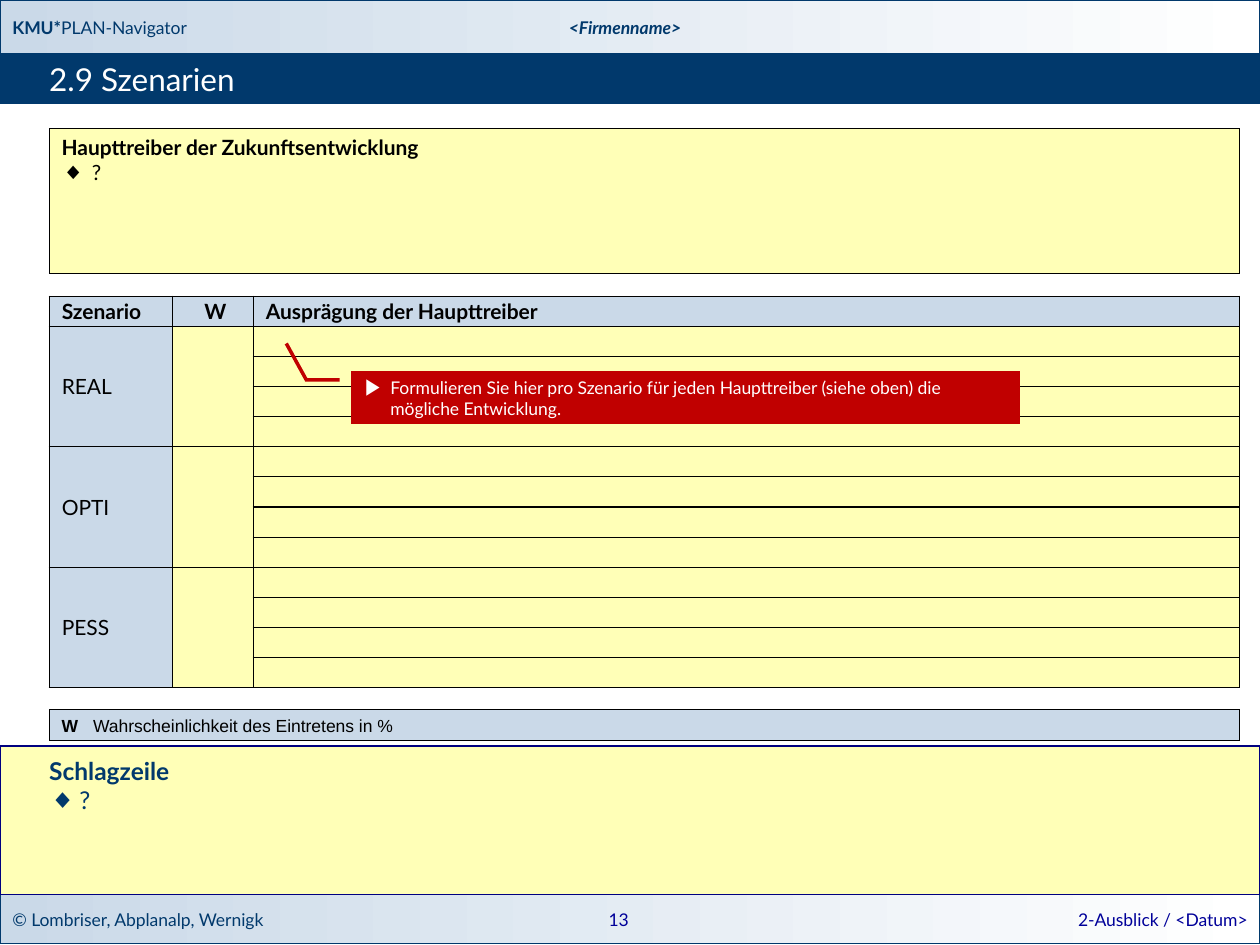
from lxml.etree import SubElement
from pptx import Presentation
from pptx.dml.color import RGBColor
from pptx.enum.shapes import MSO_SHAPE
from pptx.enum.text import MSO_ANCHOR, PP_ALIGN
from pptx.oxml.ns import qn
from pptx.util import Emu, Inches, Pt

NAVY = RGBColor(0x01, 0x39, 0x6C)
BLUE = RGBColor(0x00, 0x00, 0x99)
EDGE = RGBColor(0x00, 0x00, 0x80)
PALE = RGBColor(0xCA, 0xD9, 0xE8)
YELLOW = RGBColor(0xFF, 0xFF, 0xB7)
RED = RGBColor(0xC0, 0x00, 0x00)
BLACK = RGBColor(0, 0, 0)
WHITE = RGBColor(0xFF, 0xFF, 0xFF)

W, H = 10, 7.5
LEFT, BODY_W = 0.39, 9.45
BAR_H = 0.39
FOOT_Y = 7.1
INSETS = (0.1, 0.05, 0.1, 0.05)
TIGHT = (0.1, 0.04, 0.1, 0.04)

HEADERS = ["Szenario", "W", "Ausprägung der Haupttreiber"]
SCENARIOS = ["REAL", "OPTI", "PESS"]
ROWS_EACH = 4
COLS = [0.98, 0.64, 7.83]
TABLE_Y, TABLE_H = 2.35, 3.11

SMALL = dict(size=Pt(10), name="Lato", color=NAVY)
BOLD = dict(bold=True)
DRIVER = dict(SMALL, size=Pt(12), color=BLACK)
HEADLINE = dict(SMALL, size=Pt(14))
DIAMOND = dict(char="◆", size=110, indent=0.24)
ARROW = dict(char="▶", size=130, indent=0.2, color="FFFFFF")


def set_font(font, fmt):
    for key, value in fmt.items():
        if key == "color":
            font.color.rgb = value
        else:
            setattr(font, key, value)


def add_bullet(p, char, size, indent, color=None):
    pPr = p._p.get_or_add_pPr()
    pPr.set("marL", str(Inches(indent)))
    pPr.set("indent", str(-Inches(indent)))
    if color:
        SubElement(SubElement(pPr, qn("a:buClr")), qn("a:srgbClr"), val=color)
    SubElement(pPr, qn("a:buSzPct"), val=str(size * 1000))
    SubElement(pPr, qn("a:buFont"), typeface="Arial")
    SubElement(pPr, qn("a:buChar"), char=char)


def write(tf, paragraphs, fmt, align=PP_ALIGN.LEFT, anchor=MSO_ANCHOR.MIDDLE,
          insets=INSETS):
    """Each paragraph is (runs, bullet or None); each run is (text, format changes)."""
    tf.word_wrap = True
    tf.vertical_anchor = anchor
    for side, inset in zip(("left", "top", "right", "bottom"), insets):
        setattr(tf, f"margin_{side}", Inches(inset))
    for i, (runs, bullet) in enumerate(paragraphs):
        p = tf.paragraphs[0] if i == 0 else tf.add_paragraph()
        p.alignment = align
        if bullet:
            add_bullet(p, **bullet)
        for text, changes in runs:
            r = p.add_run()
            r.text = text
            set_font(r.font, {**fmt, **changes})


def add_box(s, box, fill, line, width=0.75, shape=MSO_SHAPE.RECTANGLE):
    """A tuple of two fill colours gives a gradient from left to right."""
    sp = s.shapes.add_shape(shape, *map(Inches, box))
    sp.shadow.inherit = False
    if isinstance(fill, RGBColor):
        sp.fill.solid()
        sp.fill.fore_color.rgb = fill
    else:
        sp.fill.gradient()
        sp.fill.gradient_angle = 0
        for stop, color in zip(sp.fill.gradient_stops, fill):
            stop.color.rgb = color
    sp.line.color.rgb = line
    sp.line.width = Pt(width)
    SubElement(sp.line._get_or_add_ln(), qn("a:miter"), lim="800000")
    return sp


def add_text(s, box, text, fmt, align, **options):
    tb = s.shapes.add_textbox(*map(Inches, box))
    write(tb.text_frame, [([(text, {})], None)], fmt, align, **options)


def fill_cell(cell, text, fill, align=PP_ALIGN.LEFT, **changes):
    cell.vertical_anchor = MSO_ANCHOR.MIDDLE
    cell.margin_left, cell.margin_right = Inches(0.1), Inches(0.06)
    cell.margin_top = cell.margin_bottom = Inches(0.02)
    p = cell.text_frame.paragraphs[0]
    p.alignment = align
    if text:
        r = p.add_run()
        r.text = text
        set_font(r.font, {**DRIVER, **changes})
    else:
        SubElement(p._p, qn("a:endParaRPr"), sz="1000")
    tcPr = cell._tc.get_or_add_tcPr()
    for side in "LRTB":
        ln = SubElement(tcPr, qn(f"a:ln{side}"), w=str(Pt(0.75)))
        SubElement(SubElement(ln, qn("a:solidFill")), qn("a:srgbClr"), val=str(BLACK))
    cell.fill.solid()
    cell.fill.fore_color.rgb = fill


def add_scenario_table(s):
    n = 1 + ROWS_EACH * len(SCENARIOS)
    table = s.shapes.add_table(n, len(COLS), Inches(LEFT), Inches(TABLE_Y),
                               Inches(BODY_W), Inches(TABLE_H)).table
    for col, width in zip(table.columns, COLS):
        col.width = Inches(width)
    for row in table.rows:
        row.height = Emu(Inches(TABLE_H) // n)
    for c, text in enumerate(HEADERS):
        align = PP_ALIGN.CENTER if c == 1 else PP_ALIGN.LEFT
        fill_cell(table.cell(0, c), text, PALE, align, bold=True)
    for r in range(1, n):
        group, offset = divmod(r - 1, ROWS_EACH)
        fill_cell(table.cell(r, 0), "" if offset else SCENARIOS[group], PALE)
        for c in (1, 2):
            fill_cell(table.cell(r, c), "", YELLOW)
        if offset == 0:
            for c in (0, 1):
                table.cell(r, c).merge(table.cell(r + ROWS_EACH - 1, c))


def main():
    prs = Presentation()
    prs.slide_width, prs.slide_height = Inches(W), Inches(H)
    s = prs.slides.add_slide(prs.slide_layouts[6])

    footer = add_box(s, (0, FOOT_Y, W, BAR_H), (PALE, WHITE), NAVY)
    write(footer.text_frame, [([("© Lombriser, Abplanalp, Wernigk", {})], None)], SMALL)
    header = add_box(s, (0, 0, W, 0.43), (PALE, WHITE), NAVY)
    write(header.text_frame,
          [([("KMU*", BOLD), ("PLAN-Navigator", {})], None)], SMALL)
    add_box(s, (0, 0.43, W, BAR_H), NAVY, NAVY)

    add_text(s, (3.19, 0, 3.54, 0.44), "<Firmenname>",
             dict(SMALL, bold=True, italic=True), PP_ALIGN.CENTER)
    add_text(s, (6.83, FOOT_Y, 3.17, 0.4), "2-Ausblick / <Datum>",
             dict(SMALL, color=BLUE), PP_ALIGN.RIGHT)
    add_text(s, (4.67, FOOT_Y, 0.48, BAR_H), "13",
             dict(SMALL, color=BLUE), PP_ALIGN.CENTER)
    add_text(s, (LEFT, 0.43, 9.29, BAR_H), "2.9 Szenarien",
             dict(SMALL, size=Pt(18), color=WHITE), PP_ALIGN.LEFT, insets=(0, 0, 0, 0))

    add_scenario_table(s)

    drivers = add_box(s, (LEFT, 1.02, BODY_W, 1.15), YELLOW, BLACK)
    write(drivers.text_frame,
          [([("Haupttreiber der Zukunftsentwicklung", BOLD)], None),
           ([("?", {})], DIAMOND)], DRIVER, anchor=MSO_ANCHOR.TOP)

    hint = add_box(s, (2.8, 2.96, 5.28, 0.39), RED, RED, 2, MSO_SHAPE.LINE_CALLOUT_2)
    for i, value in enumerate((0.14, -0.02, 0.14, -0.07, -0.6, -0.1)):
        hint.adjustments[i] = value
    write(hint.text_frame,
          [([("Formulieren Sie hier pro Szenario für jeden Haupttreiber (siehe oben) "
              "die mögliche Entwicklung.", {})], ARROW)],
          dict(SMALL, color=WHITE), insets=TIGHT)

    headline = add_box(s, (0, 5.92, W, 1.18), YELLOW, EDGE)
    write(headline.text_frame,
          [([("Schlagzeile", BOLD)], None), ([("?", {})], DIAMOND)], HEADLINE,
          anchor=MSO_ANCHOR.TOP, insets=(LEFT, 0.08, 0.2, 0.08))

    legend = add_box(s, (LEFT, 5.63, BODY_W, 0.25), PALE, BLACK)
    pPr = legend.text_frame.paragraphs[0]._p.get_or_add_pPr()
    SubElement(SubElement(pPr, qn("a:tabLst")), qn("a:tab"),
               pos=str(Inches(0.25)), algn="l")
    write(legend.text_frame,
          [([("W", BOLD), ("\tWahrscheinlichkeit des Eintretens in %", {})], None)],
          dict(SMALL, name="Arial", color=BLACK), insets=TIGHT)

    prs.save("out.pptx")


if __name__ == "__main__":
    main()
